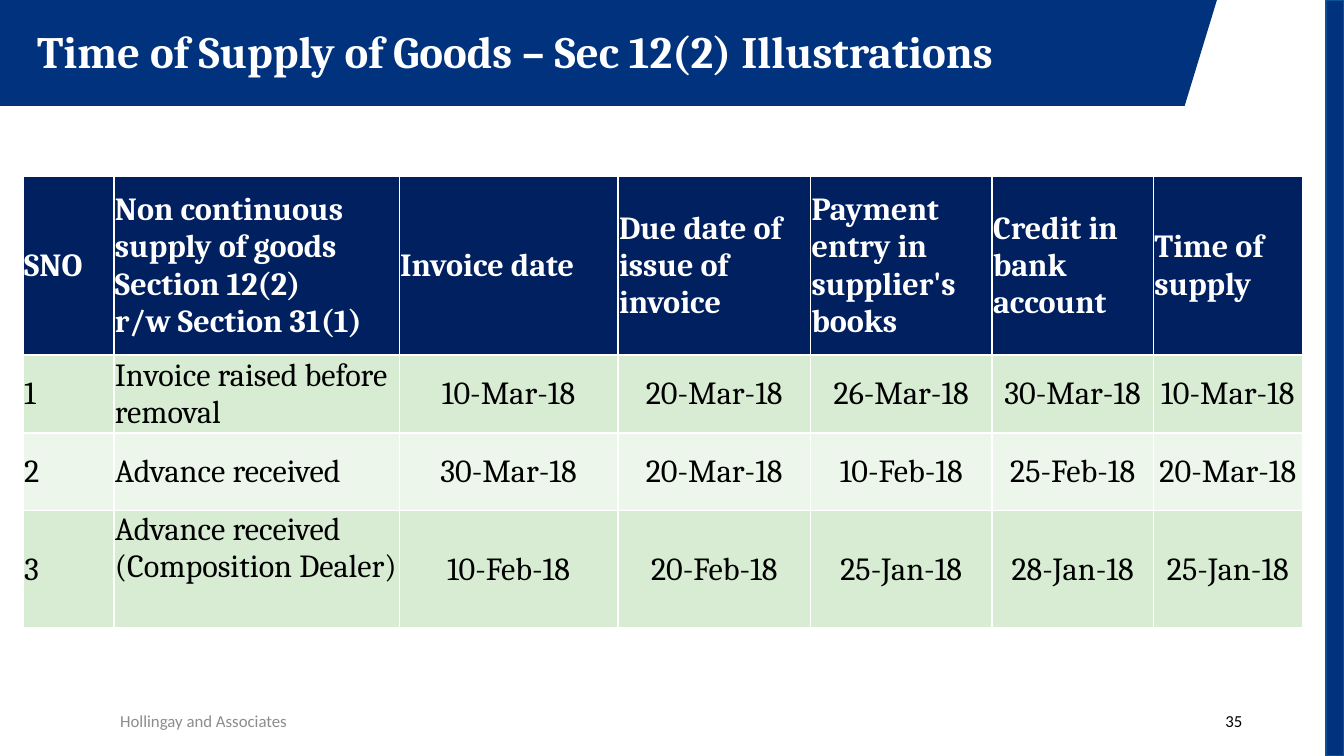
from lxml.etree import SubElement
from pptx import Presentation
from pptx.dml.color import RGBColor
from pptx.enum.shapes import MSO_SHAPE
from pptx.enum.text import MSO_ANCHOR as ANCHOR, PP_ALIGN as ALIGN
from pptx.oxml import parse_xml
from pptx.oxml.ns import nsdecls, qn
from pptx.util import Pt

PX = 9144
COLORS = {
    "banner": "00327D", "sidebar_line": "0B5292", "header": "002060",
    "band_dark": "D7ECD3", "band_light": "ECF6EA",
    "white": "FFFFFF", "black": "000000", "footer": "8C8C8C",
}
TITLE = {"name": "Cambria", "size": Pt(32), "bold": True}
HEADER = {"name": "Cambria", "size": Pt(23), "bold": True}
BODY = {"name": "Cambria", "size": Pt(23), "bold": False}
FOOTER = {"name": "Calibri", "size": Pt(12), "bold": False}
CELL_FORMAT = {
    "margin_left": PX, "margin_right": PX, "margin_top": PX, "margin_bottom": 0,
    "vertical_anchor": ANCHOR.MIDDLE,
}
COLUMN_WIDTHS = [90, 283, 217, 191, 180, 160, 148]
ROW_HEIGHTS = [177, 77, 77, 116]
ROWS = [
    ["SNO", "Non continuous supply of goods\vSection 12(2)\vr/w Section 31(1)",
     "Invoice date", "Due date of issue of invoice",
     "Payment entry in supplier's books", "Credit in bank account", "Time of supply"],
    ["1", "Invoice raised before removal",
     "10-Mar-18", "20-Mar-18", "26-Mar-18", "30-Mar-18", "10-Mar-18"],
    ["2", "Advance received",
     "30-Mar-18", "20-Mar-18", "10-Feb-18", "25-Feb-18", "20-Mar-18"],
    ["3", "Advance received\v(Composition Dealer)",
     "10-Feb-18", "20-Feb-18", "25-Jan-18", "28-Jan-18", "25-Jan-18"],
]


def rgb(name):
    return RGBColor.from_string(COLORS[name])


def emu(*lengths):
    return [length * PX for length in lengths]


def set_attributes(target, values):
    for name, value in values.items():
        setattr(target, name, value)


def write_text(frame, text, font_format, color, paragraph_format):
    frame.text = text
    paragraph = frame.paragraphs[0]
    set_attributes(paragraph, paragraph_format)
    for run in paragraph.runs:
        set_attributes(run.font, font_format)
        run.font.color.rgb = rgb(color)


def add_label(slide, box, text, font_format, color, paragraph_format, anchor=ANCHOR.MIDDLE):
    frame = slide.shapes.add_textbox(*emu(*box)).text_frame
    set_attributes(frame, {"word_wrap": True, "vertical_anchor": anchor})
    write_text(frame, text, font_format, color, paragraph_format)


def add_banner(slide, box):
    left, top, width, height = box
    slant = 32
    builder = slide.shapes.build_freeform(left, top, scale=PX)
    builder.add_line_segments([
        (left, top + height), (left + width - slant, top + height), (left + width, top),
    ])
    banner = builder.convert_to_shape()
    banner.shadow.inherit = False
    banner.fill.solid()
    banner.fill.fore_color.rgb = rgb("banner")
    banner.line.fill.background()
    add_label(slide, (left + 27, top + 13, 1011, 64),
              "Time of Supply of Goods – Sec 12(2) Illustrations", TITLE, "white",
              {"line_spacing": 1.1, "space_before": Pt(7)}, ANCHOR.TOP)


def add_sidebar(slide, box):
    sidebar = slide.shapes.add_shape(MSO_SHAPE.RECTANGLE, *emu(*box))
    sidebar.shadow.inherit = False
    sidebar.fill.solid()
    sidebar.fill.fore_color.rgb = rgb("banner")
    sidebar.line.color.rgb = rgb("sidebar_line")
    sidebar.line.width = Pt(1)


def add_borders(cell, widths):
    properties = cell._tc.get_or_add_tcPr()
    for index, (side, width) in enumerate(widths.items()):
        border = parse_xml(f'<a:ln{side} {nsdecls("a")} w="{Pt(width)}"/>')
        fill = SubElement(border, qn("a:solidFill"))
        SubElement(fill, qn("a:srgbClr"), val=COLORS["white"])
        properties.insert(index, border)


def add_illustrations(slide, box):
    table = slide.shapes.add_table(len(ROWS), len(COLUMN_WIDTHS), *emu(*box)).table
    for column, width in zip(table.columns, COLUMN_WIDTHS):
        column.width = width * PX
    for row, height in zip(table.rows, ROW_HEIGHTS):
        row.height = height * PX
    for row_index, texts in enumerate(ROWS):
        is_header = row_index == 0
        band = "header" if is_header else ("band_light", "band_dark")[row_index % 2]
        borders = {"L": 1, "R": 1, "T": 1.5 if row_index == 1 else 1,
                   "B": 1.5 if is_header else 1}
        for column_index, text in enumerate(texts):
            cell = table.cell(row_index, column_index)
            centered = not is_header and column_index > 1
            set_attributes(cell, CELL_FORMAT)
            cell.fill.solid()
            cell.fill.fore_color.rgb = rgb(band)
            write_text(cell.text_frame, text, HEADER if is_header else BODY,
                       "white" if is_header else "black",
                       {"alignment": ALIGN.CENTER if centered else ALIGN.LEFT})
            add_borders(cell, borders)
    table.cell(3, 1).vertical_anchor = ANCHOR.TOP


def add_footer(slide, box):
    left, top, width, height = box
    add_label(slide, (left, top, 450, height), "Hollingay and Associates",
              FOOTER, "footer", {"alignment": ALIGN.CENTER})
    add_label(slide, (left + width - 300, top, 300, height), "35",
              FOOTER, "black", {"alignment": ALIGN.RIGHT})


def main():
    presentation = Presentation()
    presentation.slide_width, presentation.slide_height = emu(1333, 750)
    slide = presentation.slides.add_slide(presentation.slide_layouts[6])
    add_banner(slide, (0, 0, 1207, 105))
    add_sidebar(slide, (1315, 0, 18, 750))
    add_illustrations(slide, (23, 175, sum(COLUMN_WIDTHS), sum(ROW_HEIGHTS)))
    add_footer(slide, (-23, 695, 1265, 40))
    presentation.save("out.pptx")


if __name__ == "__main__":
    main()
